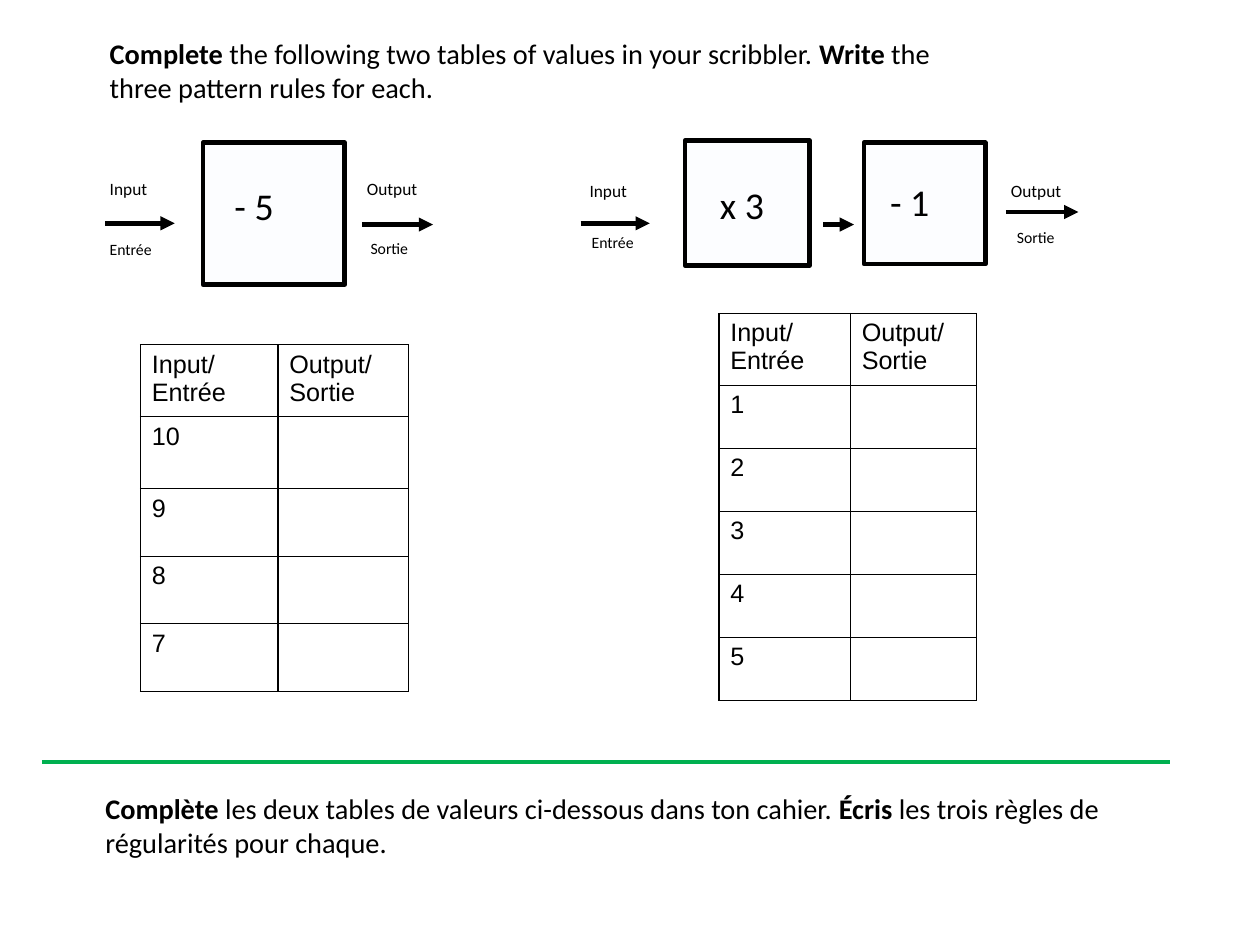
from lxml import etree
from pptx import Presentation
from pptx.dml.color import RGBColor
from pptx.enum.shapes import MSO_CONNECTOR, MSO_SHAPE
from pptx.oxml.ns import qn
from pptx.util import Pt

STRAIGHT = MSO_CONNECTOR.STRAIGHT
RECTANGLE = MSO_SHAPE.RECTANGLE

THEME = {
    "black": "000000", "white": "FFFFFF", "machine": "FCFDFF", "green": "00B050",
    "text font": "Calibri", "table font": "Arial",
    "instruction": 18, "rule": 24, "input": 11, "entrée": 10, "table": 16,
    "line": 3, "border": 1,
}
SLIDE_SIZE = (800, 600)

INSTRUCTIONS = [
    ((62.6, 19.4, 569.5, 51), [[
        ("Complete", True), (" the following two tables of values in your scribbler. ", False),
        ("Write", True), (" the three pattern rules for each.", False)]]),
    ((59.8, 499, 691, 51), [[
        ("Complète", True), (" les deux tables de valeurs ci-dessous dans ton cahier. ", False),
        ("Écris", True), (" les trois règles de", False)],
        [("régularités pour chaque.", False)]]),
]
MACHINES = [(128.9, 90.7, 90), (434.9, 89.3, 79.2), (548.6, 90.7, 77)]
ARROWS = [(67, 110.9, 141.8), (229.7, 275, 142.6), (368.6, 412.6, 141.8),
          (522.7, 542.2, 142.6), (638.6, 684.7, 134.6)]
DIVIDER = (26.6, 743, 483.8)
LABELS = [
    ("- 5", "rule", 141.8, 112.3), ("x 3", "rule", 450, 111.6), ("- 1", "rule", 558, 110.2),
    ("Input", "input", 62.6, 109.4), ("Output", "input", 225.8, 109.4),
    ("Input", "input", 367.2, 110.9), ("Output", "input", 634.7, 110.9),
    ("Entrée", "entrée", 62.6, 149), ("Sortie", "entrée", 228.2, 148.3),
    ("Entrée", "entrée", 368.6, 144), ("Sortie", "entrée", 638.6, 141.1),
]
LABEL_WIDTH = 60
HEADINGS = ("Input/ Entrée", "Output/ Sortie")
TABLES = [
    ((89.3, 218.9), (87.3, 83), (45.7, 45.7, 42.9, 42.9, 42.9), (10, 9, 8, 7)),
    ((456.5, 199.1), (83.5, 80), (45.7, 40, 40, 40, 40, 40), (1, 2, 3, 4, 5)),
]


def color(name):
    return RGBColor.from_string(THEME[name])


def set_font(font, size, family="text font"):
    font.name, font.size = THEME[family], Pt(THEME[size])
    font.color.rgb = color("black")


def add_text(slide, box, paragraphs, size):
    frame = slide.shapes.add_textbox(*map(Pt, box)).text_frame
    frame.word_wrap = True
    for index, runs in enumerate(paragraphs):
        paragraph = frame.add_paragraph() if index else frame.paragraphs[0]
        set_font(paragraph.font, size)
        for text, bold in runs:
            run = paragraph.add_run()
            run.text = text
            if bold:
                run.font.bold = True


def add_machine(slide, left, top, side):
    shape = slide.shapes.add_shape(RECTANGLE, *map(Pt, (left, top, side, side)))
    shape.shadow.inherit = False
    shape.fill.solid()
    shape.fill.fore_color.rgb = color("machine")
    shape.line.color.rgb = color("black")
    shape.line.width = Pt(THEME["line"])


def add_line(slide, start, end, height, name, arrow=False):
    connector = slide.shapes.add_connector(STRAIGHT, *map(Pt, (start, height, end, height)))
    connector.line.color.rgb = color(name)
    connector.line.width = Pt(THEME["line"])
    properties = connector._element.spPr
    if arrow:
        etree.SubElement(properties.find(qn("a:ln")), qn("a:tailEnd"), type="triangle")
    etree.SubElement(properties, qn("a:effectLst"))


def add_borders(cell):
    properties = cell._tc.get_or_add_tcPr()
    for index, side in enumerate(("a:lnL", "a:lnR", "a:lnT", "a:lnB")):
        line = etree.Element(qn(side), w=str(Pt(THEME["border"])))
        fill = etree.SubElement(line, qn("a:solidFill"))
        etree.SubElement(fill, qn("a:srgbClr"), val=THEME["black"])
        properties.insert(index, line)


def add_value_table(slide, corner, widths, heights, inputs):
    box = (*corner, sum(widths), sum(heights))
    table = slide.shapes.add_table(len(heights), len(widths), *map(Pt, box)).table
    for column, width in zip(table.columns, widths):
        column.width = Pt(width)
    contents = [HEADINGS] + [(str(value), "") for value in inputs]
    for row, height, texts in zip(table.rows, heights, contents):
        row.height = Pt(height)
        for cell, text in zip(row.cells, texts):
            cell.text = text
            font = cell.text_frame.paragraphs[0].font
            set_font(font, "table", "table font")
            font.bold = False
            cell.fill.solid()
            cell.fill.fore_color.rgb = color("white")
            add_borders(cell)


def main():
    """Build the slide of two function machines and their tables of values."""
    presentation = Presentation()
    presentation.slide_width, presentation.slide_height = map(Pt, SLIDE_SIZE)
    slide = presentation.slides.add_slide(presentation.slide_layouts[6])
    for box, paragraphs in INSTRUCTIONS:
        add_text(slide, box, paragraphs, "instruction")
    for machine in MACHINES:
        add_machine(slide, *machine)
    for arrow in ARROWS:
        add_line(slide, *arrow, "black", arrow=True)
    for text, size, left, top in LABELS:
        box = (left, top, LABEL_WIDTH, THEME[size] * 1.2 + 7.2)
        add_text(slide, box, [[(text, False)]], size)
    for value_table in TABLES:
        add_value_table(slide, *value_table)
    add_line(slide, *DIVIDER, "green")
    presentation.save("out.pptx")


if __name__ == "__main__":
    main()
